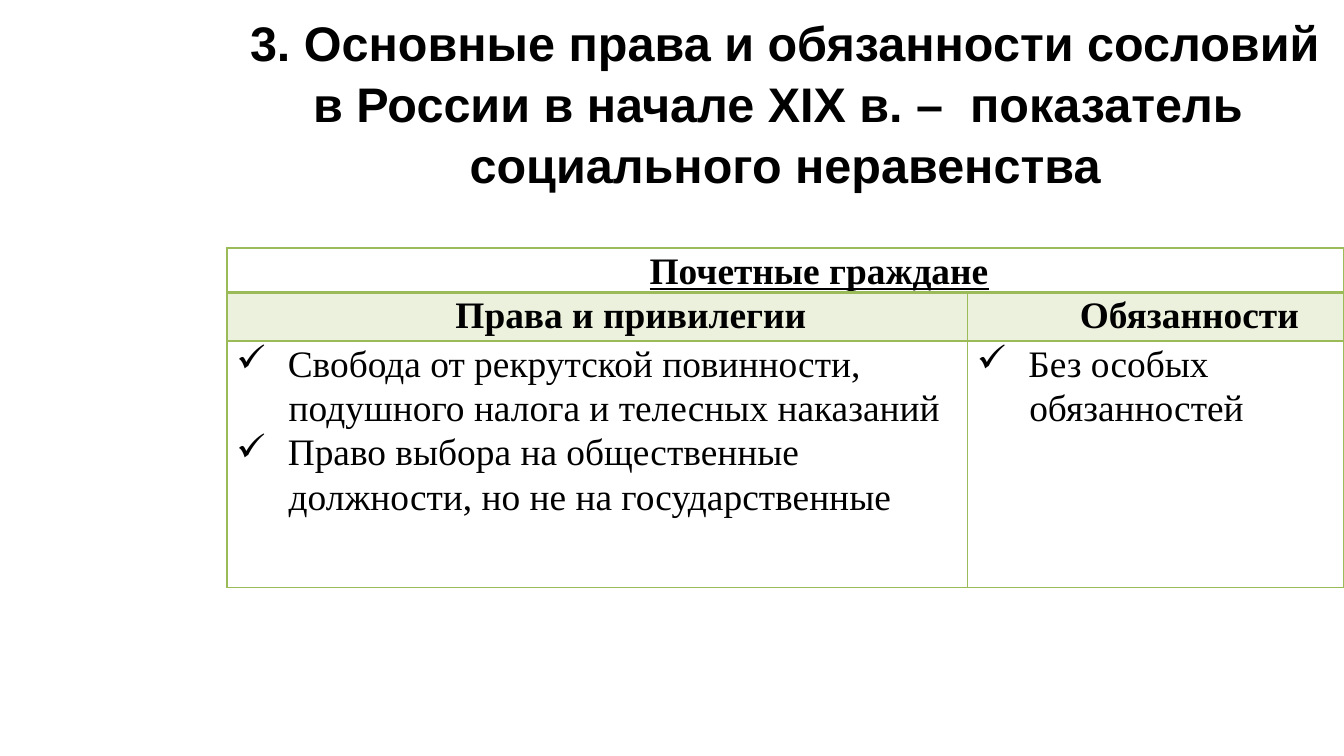
from lxml import etree
from pptx import Presentation
from pptx.dml.color import RGBColor
from pptx.enum import text as t
from pptx.oxml import ns
from pptx.util import Pt

HUES = {"ink": "000000", "green": "9BBB59"}
HEADS = ["Права и привилегии", "Обязанности"]
# Each point is a list of its lines
RIGHTS = [
    ["Свобода от рекрутской повинности, ", "подушного налога и телесных наказаний"],
    ["Право выбора на общественные ", "должности, но не на государственные"],
]
DUTIES = [["Без особых ", "обязанностей"]]


def hue(name):
    return RGBColor.from_string(HUES[name])


def style(para, face, size, bold=False, line=False):
    for run in para.runs:
        font = run.font
        font.name, font.size, font.bold = face, Pt(size), bold
        font.underline = line
        font.color.rgb = hue("ink")


def add(parent, tag, **attrs):
    return etree.SubElement(parent, ns.qn(tag), attrs)


def indent(para, left, first):
    props = para._p.get_or_add_pPr()
    props.set("marL", str(Pt(left)))
    props.set("indent", str(Pt(first)))
    return props


def edge(cell, low=1):
    """Green borders; low is the width of the bottom one."""
    props = cell._tc.get_or_add_tcPr()
    for i, (side, width) in enumerate(zip("LRTB", (1, 1, 1, low))):
        line = etree.Element(ns.qn(f"a:ln{side}"), w=str(Pt(width)))
        add(add(line, "a:solidFill"), "a:srgbClr", val=HUES["green"])
        props.insert(i, line)


def setup(cell):
    cell.margin_left = cell.margin_right = Pt(5)
    cell.margin_top = cell.margin_bottom = 0
    cell.fill.background()


def head(cell, words, line=False):
    para = cell.text_frame.paragraphs[0]
    para.text = words
    para.alignment, para.line_spacing = t.PP_ALIGN.CENTER, 1.07
    indent(para, 36, 0)
    style(para, "Times New Roman", 20, True, line)


def tint(cell):
    cell.fill.solid()
    cell.fill.fore_color.rgb = hue("green")
    clr = cell._tc.tcPr.find(".//" + ns.qn("a:srgbClr"))
    add(clr, "a:alpha", val="20000")


def points(cell, items):
    lines = [(row, i == 0) for item in items for i, row in enumerate(item)]
    frame = cell.text_frame
    frame.text = "\n".join(row for row, _ in lines)
    for para, (_, first) in zip(frame.paragraphs, lines):
        para.alignment, para.line_spacing = t.PP_ALIGN.JUSTIFY, 1.07
        if first:
            add(indent(para, 27.5, -27.5), "a:buChar", char="✓")
        else:
            indent(para, 0, 28)
        style(para, "Times New Roman", 20)


def title(slide, x, y, w, h):
    box = slide.shapes.title
    box.left, box.top, box.width, box.height = map(Pt, (x, y, w, h))
    frame = box.text_frame
    frame.text = ("3. Основные права и обязанности сословий в России "
                  "в начале XIX в. –  показатель \vсоциального неравенства")
    frame.word_wrap, frame.auto_size = True, t.MSO_AUTO_SIZE.NONE
    frame.vertical_anchor = t.MSO_ANCHOR.MIDDLE
    frame.margin_top, frame.margin_bottom = 0, Pt(28)
    para = frame.paragraphs[0]
    para.alignment, para.line_spacing = t.PP_ALIGN.CENTER, 1.05
    style(para, "Arial", 26, True)


def rights(slide, x, y, w, h):
    grid = slide.shapes.add_table(3, 2, *map(Pt, (x, y, w, h))).table
    grid.first_row = grid.horz_banding = False
    left, top, mid = 396.72, 23.8, 26
    for col, size in zip(grid.columns, (left, w - left)):
        col.width = Pt(size)
    for row, size in zip(grid.rows, (top, mid, h - top - mid)):
        row.height = Pt(size)
    for cell in grid.iter_cells():
        setup(cell)
    # Estate name across both columns
    grid.cell(0, 0).merge(grid.cell(0, 1))
    head(grid.cell(0, 0), "Почетные граждане", True)
    # Column heads and their points
    for i, (words, items) in enumerate(zip(HEADS, (RIGHTS, DUTIES))):
        head(grid.cell(1, i), words)
        tint(grid.cell(1, i))
        points(grid.cell(2, i), items)
        for j, low in enumerate((2, 1, 1)):
            edge(grid.cell(j, i), low)


def main():
    deck = Presentation()
    deck.slide_width, deck.slide_height = Pt(720), Pt(405)
    slide = deck.slides.add_slide(deck.slide_layouts[5])
    x, w = 121.7, 598.3
    title(slide, x, 2, w, 132.5)
    rights(slide, x, 133, w, 181.8)
    deck.save("out.pptx")


if __name__ == "__main__":
    main()
